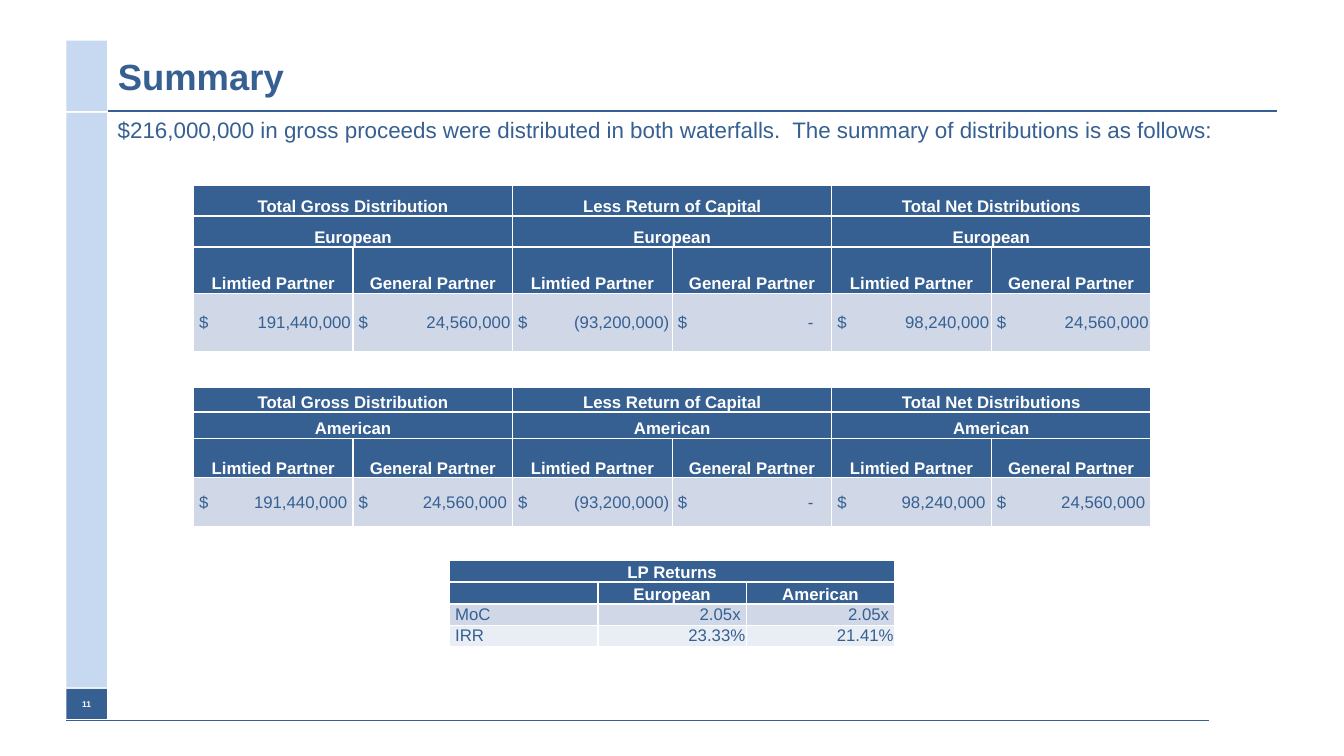
from lxml.etree import SubElement
from pptx import Presentation
from pptx.dml.color import RGBColor
from pptx.enum.shapes import MSO_CONNECTOR, MSO_SHAPE
from pptx.enum.text import MSO_ANCHOR as Anchor, MSO_AUTO_SIZE as AutoSize, PP_ALIGN as Align
from pptx.oxml import parse_xml
from pptx.oxml.ns import nsdecls, qn
from pptx.util import Pt

BLUE = RGBColor(0x37, 0x60, 0x92)
TABLE_BLUE = RGBColor(0x36, 0x60, 0x92)
PALE_BLUE = RGBColor(0xC6, 0xD9, 0xF1)
BAND_DARK = RGBColor(0xD0, 0xD8, 0xE8)
BAND_LIGHT = RGBColor(0xE9, 0xED, 0xF4)
WHITE = RGBColor(0xFF, 0xFF, 0xFF)


def write(paragraph, text, size, color, bold=False, align=Align.LEFT):
    paragraph.alignment = align
    run = paragraph.add_run()
    run.text = text
    run.font.name = "Arial"
    run.font.size = Pt(size)
    run.font.bold = bold
    run.font.color.rgb = color


def add_grid(left, top, widths, heights, fills):
    """Add a table with white borders, one fill per row and 12 pt empty cells."""
    table = slide.shapes.add_table(len(heights), len(widths), Pt(left), Pt(top),
                                   Pt(sum(widths)), Pt(sum(heights))).table
    table.first_row = table.horz_banding = False
    for column, width in zip(table.columns, widths):
        column.width = Pt(width)
    for row_index, (row, height) in enumerate(zip(table.rows, heights)):
        row.height = Pt(height)
        for cell in row.cells:
            cell.fill.solid()
            cell.fill.fore_color.rgb = fills[row_index]
            cell.margin_left = cell.margin_right = cell.margin_top = Pt(0.7)
            cell.margin_bottom = Pt(0)
            cell.vertical_anchor = Anchor.BOTTOM
            end = SubElement(cell.text_frame.paragraphs[0]._p, qn("a:endParaRPr"))
            end.set("sz", "1200")
            # The line under the first row is thicker
            thick_side = {0: "lnB", 1: "lnT"}.get(row_index)
            for place, side in enumerate(("lnL", "lnR", "lnT", "lnB")):
                width = Pt(1.5 if side == thick_side else 1)
                border = parse_xml(
                    f'<a:{side} {nsdecls("a")} w="{width}"><a:solidFill>'
                    f'<a:srgbClr val="{WHITE}"/></a:solidFill></a:{side}>')
                cell._tc.get_or_add_tcPr().insert(place, border)
    return table


presentation = Presentation()
presentation.slide_width = Pt(960)
presentation.slide_height = Pt(540)
slide = presentation.slides.add_slide(presentation.slide_layouts[5])

# Rules under the title and at the foot
for x1, x2, y, weight in ((47.5, 863.3, 514.8, 0.75), (77, 912.2, 79.2, 1)):
    rule = slide.shapes.add_connector(MSO_CONNECTOR.STRAIGHT, Pt(x1), Pt(y), Pt(x2), Pt(y))
    rule.line.color.rgb = BLUE
    rule.line.width = Pt(weight)
    SubElement(rule._element.spPr, qn("a:effectLst"))

# Side band, with the page number in its last block
for top, height, color in ((80.6, 410.4, PALE_BLUE), (29, 50.2, PALE_BLUE), (492, 21.6, BLUE)):
    block = slide.shapes.add_shape(MSO_SHAPE.RECTANGLE, Pt(47.5), Pt(top), Pt(28.8), Pt(height))
    block.shadow.inherit = False
    block.fill.solid()
    block.fill.fore_color.rgb = color
    block.line.fill.background()
block.text_frame.vertical_anchor = Anchor.MIDDLE
write(block.text_frame.paragraphs[0], "11", 6, WHITE, True, Align.CENTER)

# Title and lead sentence
title = slide.shapes.title
title.left, title.top, title.width, title.height = Pt(77), Pt(28.8), Pt(833.8), Pt(50.4)
title.text_frame.auto_size = AutoSize.NONE
title.text_frame.vertical_anchor = Anchor.MIDDLE
write(title.text_frame.paragraphs[0], "Summary", 26, BLUE, True)

lead = slide.shapes.add_textbox(Pt(77), Pt(79.2), Pt(833.8), Pt(36))
lead.text_frame.word_wrap = True
write(lead.text_frame.paragraphs[0],
      "$216,000,000 in gross proceeds were distributed in both waterfalls.  "
      "The summary of distributions is as follows:", 16, BLUE)

# Distribution tables: one per waterfall
groups = ("Total Gross Distribution", "Less Return of Capital", "Total Net Distributions")
partners = ("Limtied Partner", "General Partner")
amounts = ("191,440,000", "24,560,000", "(93,200,000)", "-", "98,240,000", "24,560,000")
waterfalls = (
    ("European", 132.5, (21.6, 22.3, 33.1, 41.8), 108.5),
    ("American", 276.5, (18, 18.7, 28.1, 34.6), 106),
)
for waterfall, top, heights, amount_tab in waterfalls:
    table = add_grid(138.2, top, [114] * 6, heights, [TABLE_BLUE] * 3 + [BAND_DARK])
    for index, group in enumerate(groups):
        for row, heading in enumerate((group, waterfall)):
            cell = table.cell(row, 2 * index)
            cell.merge(table.cell(row, 2 * index + 1))
            write(cell.text_frame.paragraphs[0], heading, 12, WHITE, True, Align.CENTER)
    for column, amount in enumerate(amounts):
        write(table.cell(2, column).text_frame.paragraphs[0], partners[column % 2],
              12, WHITE, True, Align.CENTER)
        cell = table.cell(3, column)
        cell.vertical_anchor = Anchor.MIDDLE
        cell.margin_left = Pt(4)
        cell.margin_right = Pt(0)
        paragraph = cell.text_frame.paragraphs[0]
        # Accounting layout: dollar sign at left, amount on a right tab
        position = {"-": 97, "(93,200,000)": 108}.get(amount, amount_tab)
        tabs = SubElement(paragraph._p.get_or_add_pPr(), qn("a:tabLst"))
        SubElement(tabs, qn("a:tab"), pos=str(Pt(position)), algn="r")
        write(paragraph, f"$\t{amount}", 12, TABLE_BLUE)

# Returns table
returns = add_grid(321.1, 400.3, [106] * 3, (15.7, 15.5, 15.1, 15.1),
                   (TABLE_BLUE, TABLE_BLUE, BAND_DARK, BAND_LIGHT))
returns.cell(0, 0).merge(returns.cell(0, 2))
for row, column, heading in ((0, 0, "LP Returns"), (1, 1, "European"), (1, 2, "American")):
    write(returns.cell(row, column).text_frame.paragraphs[0], heading,
          12, WHITE, True, Align.CENTER)
measures = (("MoC", "2.05x", "2.05x", 4), ("IRR", "23.33%", "21.41%", 0.7))
for row, (*texts, right_margin) in enumerate(measures, start=2):
    for column, text in enumerate(texts):
        cell = returns.cell(row, column)
        cell.vertical_anchor = Anchor.TOP
        cell.margin_left = Pt(4)
        cell.margin_right = Pt(right_margin)
        write(cell.text_frame.paragraphs[0], text, 12, TABLE_BLUE,
              align=Align.RIGHT if column else Align.LEFT)

presentation.save("out.pptx")
